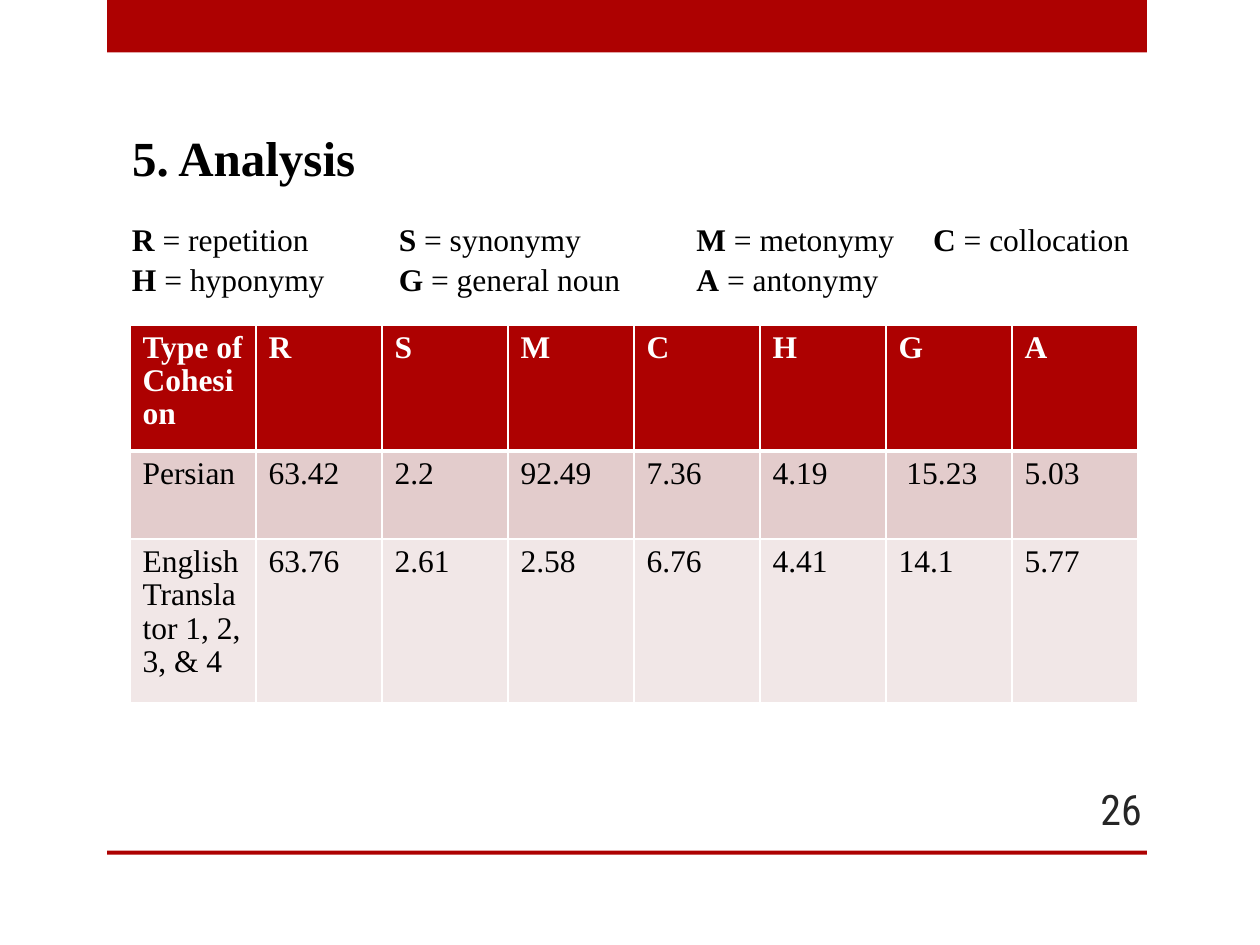
from dataclasses import dataclass

from lxml.etree import SubElement
from pptx import Presentation
from pptx.dml.color import RGBColor
from pptx.enum.shapes import MSO_SHAPE
from pptx.enum.text import MSO_ANCHOR, MSO_AUTO_SIZE, PP_ALIGN
from pptx.oxml.ns import qn
from pptx.util import Cm, Pt


@dataclass(frozen=True)
class Theme:
    red: str = "AD0101"
    persian_row: str = "E3CCCC"
    english_row: str = "F1E7E7"
    white: str = "FFFFFF"
    black: str = "000000"
    gray: str = "262626"
    serif: str = "Times New Roman"
    condensed: str = "Roboto Condensed"
    title_size: int = 28
    body_size: int = 18
    number_size: int = 24


THEME = Theme()

LEGEND = [
    [("R", "repetition"), ("S", "synonymy"), ("M", "metonymy"), ("C", "collocation")],
    [("H", "hyponymy"), ("G", "general noun"), ("A", "antonymy")],
]
LEGEND_STOPS = (5.38, 11.38, 16.15)

COHESION = [
    ["Type of Cohesion", "R", "S", "M", "C", "H", "G", "A"],
    ["Persian", "63.42", "2.2", "92.49", "7.36", "4.19", " 15.23", "5.03"],
    ["English\nTranslator 1, 2, 3, & 4", "63.76", "2.61", "2.58", "6.76", "4.41", "14.1", "5.77"],
]
ROW_HEIGHTS = (2.54, 1.78, 3.3)


def set_font(paragraph, size, color=THEME.black, bold=None, name=THEME.serif):
    font = paragraph.font
    font.name, font.size, font.bold = name, Pt(size), bold
    font.color.rgb = RGBColor.from_string(color)


def add_bands(slide, left, top, width, height):
    """Thick band along the top of the box, thin rule along its bottom."""
    rule_height = 0.08
    for band_top, band_height in ((top, 1.06), (top + height - rule_height, rule_height)):
        band = slide.shapes.add_shape(
            MSO_SHAPE.RECTANGLE, Cm(left), Cm(band_top), Cm(width), Cm(band_height))
        band.shadow.inherit = False
        band.fill.solid()
        band.fill.fore_color.rgb = RGBColor.from_string(THEME.red)
        band.line.fill.background()


def place_title(slide, left, top, width, height):
    title = slide.shapes.title
    title.left, title.top, title.width, title.height = map(Cm, (left, top, width, height))
    frame = title.text_frame
    frame.text = "5. Analysis"
    frame.auto_size = MSO_AUTO_SIZE.NONE
    frame.vertical_anchor = MSO_ANCHOR.TOP
    heading = frame.paragraphs[0]
    heading.alignment = PP_ALIGN.LEFT
    set_font(heading, THEME.title_size, bold=True)


def add_legend(slide, left, top, width, height):
    """Abbreviations in columns held by tab stops."""
    frame = slide.shapes.add_textbox(Cm(left), Cm(top), Cm(width), Cm(height)).text_frame
    frame.word_wrap = True
    for row, entries in enumerate(LEGEND):
        line = frame.add_paragraph() if row else frame.paragraphs[0]
        stops = SubElement(line._p.get_or_add_pPr(), qn("a:tabLst"))
        for stop in LEGEND_STOPS:
            SubElement(stops, qn("a:tab"), pos=str(Cm(stop)), algn="l")
        line.space_after = Pt(1)
        set_font(line, THEME.body_size)
        for column, (letter, meaning) in enumerate(entries):
            key = line.add_run()
            key.text = f"\t{letter}" if column else letter
            key.font.bold = True
            line.add_run().text = f" = {meaning}"


def set_borders(cell, bottom):
    properties = cell._tc.get_or_add_tcPr()
    # Borders must precede the fill in the cell properties
    for position, (side, points) in enumerate(
            (("lnL", 1), ("lnR", 1), ("lnT", 1), ("lnB", bottom))):
        border = SubElement(properties, qn(f"a:{side}"), w=str(Pt(points)))
        fill = SubElement(border, qn("a:solidFill"))
        SubElement(fill, qn("a:srgbClr"), val=THEME.white)
        properties.insert(position, border)


def add_cohesion_table(slide, left, top, width):
    table = slide.shapes.add_table(
        len(COHESION), len(COHESION[0]),
        Cm(left), Cm(top), Cm(width), Cm(sum(ROW_HEIGHTS))).table
    for column in table.columns:
        column.width = Cm(width / len(COHESION[0]))
    row_fills = (THEME.red, THEME.persian_row, THEME.english_row)
    for r, (values, height, fill) in enumerate(zip(COHESION, ROW_HEIGHTS, row_fills)):
        header = r == 0
        table.rows[r].height = Cm(height)
        for c, value in enumerate(values):
            cell = table.cell(r, c)
            cell.text = value
            cell.fill.solid()
            cell.fill.fore_color.rgb = RGBColor.from_string(fill)
            # The header's heavy lower edge is shared with the row below
            set_borders(cell, bottom=3 if header else 1)
            if r == 1:
                cell._tc.tcPr.find(qn("a:lnT")).set("w", str(Pt(3)))
            for paragraph in cell.text_frame.paragraphs:
                paragraph.line_spacing = 0.96
                set_font(paragraph, THEME.body_size,
                         THEME.white if header else THEME.black, header)


def add_page_number(slide, left, top, width, height):
    frame = slide.shapes.add_textbox(Cm(left), Cm(top), Cm(width), Cm(height)).text_frame
    frame.word_wrap = True
    frame.vertical_anchor = MSO_ANCHOR.MIDDLE
    number = frame.paragraphs[0]
    number.text = "26"
    number.alignment = PP_ALIGN.RIGHT
    set_font(number, THEME.number_size, THEME.gray, name=THEME.condensed)


def main():
    deck = Presentation()
    deck.slide_width, deck.slide_height = Cm(25.4), Cm(19.05)
    slide = deck.slides.add_slide(deck.slide_layouts[5])
    add_bands(slide, 2.16, 0, 20.96, 17.23)
    place_title(slide, 2.41, 2.44, 20.75, 1.4)
    add_legend(slide, 2.41, 4.32, 20.75, 1.8)
    add_cohesion_table(slide, 2.62, 6.55, 20.32)
    add_page_number(slide, 21.16, 15.8, 2.11, 1.02)
    deck.save("out.pptx")


if __name__ == "__main__":
    main()
